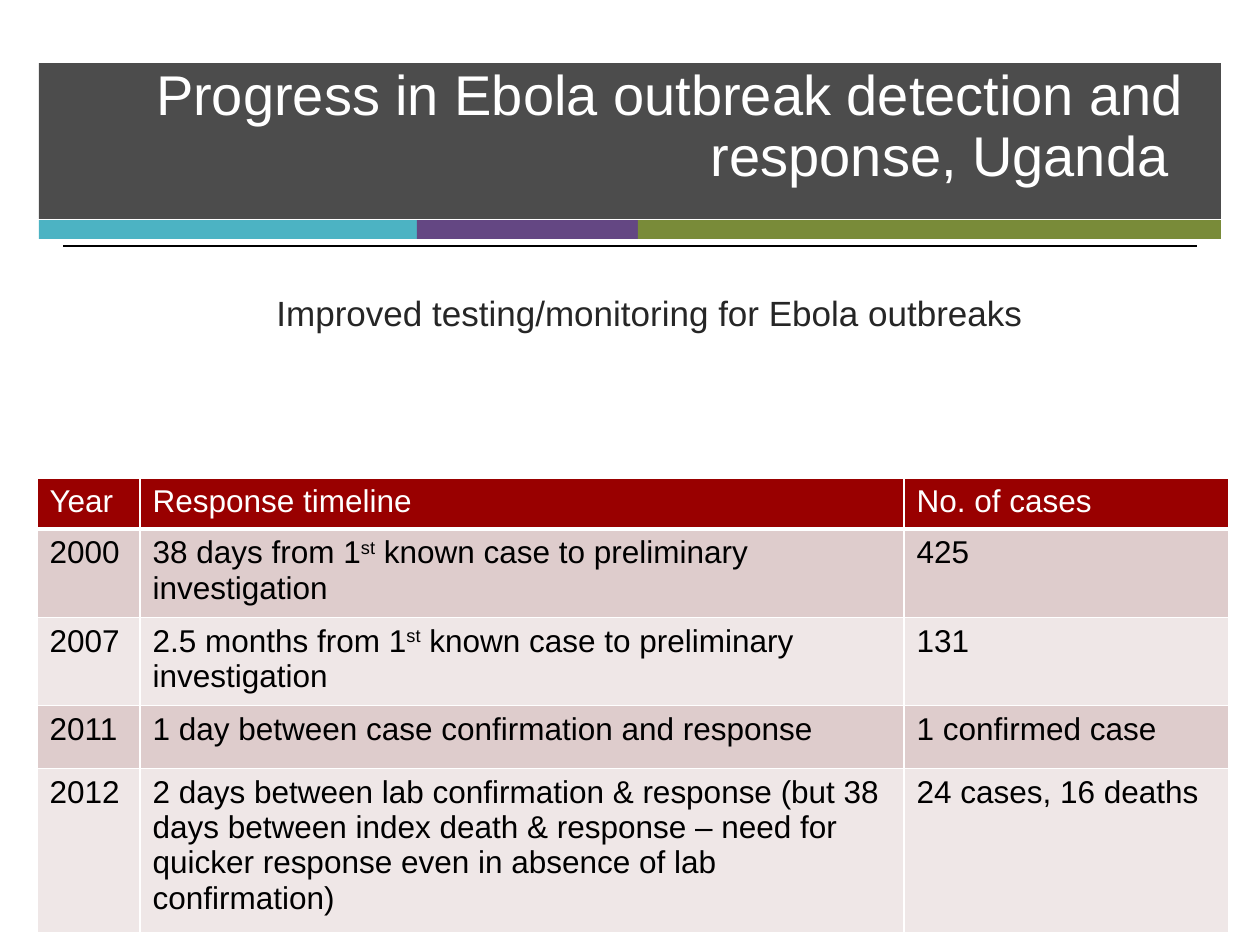
from lxml import etree
from pptx import Presentation
from pptx.dml.color import RGBColor
from pptx.enum.shapes import MSO_CONNECTOR, MSO_SHAPE
from pptx.enum.text import MSO_ANCHOR, PP_ALIGN
from pptx.oxml.ns import qn
from pptx.util import Pt

RECT = MSO_SHAPE.RECTANGLE
LINE = MSO_CONNECTOR.STRAIGHT
MIDDLE = MSO_ANCHOR.MIDDLE
RIGHT = PP_ALIGN.RIGHT
SCALE = 914400 / 126

STRIPES = [(378, "4CB3C3"), (221, "644783"), (583, "798B39")]
COLS = [103, 764, 325]
HEIGHTS = [51, 83, 84, 63, 153]
ROWS = [
    [["Year"], ["Response timeline"], ["No. of cases"]],
    [["2000"], ["38 days from 1", "st", " known case to preliminary investigation"], ["425"]],
    [["2007"], ["2.5 months from 1", "st", " known case to preliminary investigation"], ["131"]],
    [["2011"], ["1 day between case confirmation and response"], ["1 confirmed case"]],
    [["2012"], ["2 days between lab confirmation & response (but 38 days between "
                "index death & response – need for quicker response even in "
                "absence of lab confirmation)"], ["24 cases, 16 deaths"]],
]


def px(num):
    return round(num * SCALE)


def paint(fill, color):
    fill.solid()
    fill.fore_color.rgb = RGBColor.from_string(color)


def style(run, size, color):
    run.font.name = "Arial"
    run.font.size = Pt(size)
    run.font.color.rgb = RGBColor.from_string(color)


def block(slide, box, color):
    shape = slide.shapes.add_shape(RECT, *map(px, box))
    shape.shadow.inherit = False
    shape.line.fill.background()
    paint(shape.fill, color)
    return shape


def write(slide, box, text, size, color):
    frame = slide.shapes.add_textbox(*map(px, box)).text_frame
    frame.word_wrap = True
    frame.text = text
    style(frame.paragraphs[0].runs[0], size, color)
    return frame


def banner(slide, box):
    left, top, width, height = box
    band = block(slide, (left, top, width, 156), "000000")
    tint = band.fill._xPr.find(".//" + qn("a:srgbClr"))
    etree.SubElement(tint, qn("a:alpha"), val="70000")
    edge = left
    for span, color in STRIPES:
        block(slide, (edge, top + 157, span, 19), color)
        edge += span
    frame = write(slide, (0, top - 53, left + width - 24, 236),
                  "Progress in Ebola outbreak detection and response, Uganda ",
                  32, "FFFFFF")
    frame.vertical_anchor = MIDDLE
    frame.paragraphs[0].alignment = RIGHT
    frame.paragraphs[0].line_spacing = 0.9
    base = px(top + height)
    rule = slide.shapes.add_connector(
        LINE, px(left + 24), base, px(left + width - 24), base)
    rule.line.width = Pt(0.75)
    paint(rule.line.fill, "000000")
    etree.SubElement(rule._element.spPr, qn("a:effectLst"))


def lead(slide, box):
    frame = write(slide, box, "Improved testing/monitoring for Ebola outbreaks",
                  20, "262626")
    props = frame.paragraphs[0]._p.get_or_add_pPr()
    props.set("marL", str(px(144)))
    props.set("indent", str(px(-32)))


def border(cell, base):
    props = cell._tc.get_or_add_tcPr()
    sides = zip(("a:lnL", "a:lnR", "a:lnT", "a:lnB"), (1, 1, 1, base))
    for place, (tag, width) in enumerate(sides):
        line = etree.Element(qn(tag), w=str(Pt(width)))
        fill = etree.SubElement(line, qn("a:solidFill"))
        etree.SubElement(fill, qn("a:srgbClr"), val="FFFFFF")
        props.insert(place, line)


def fill_cell(cell, parts, head, back):
    para = cell.text_frame.paragraphs[0]
    for part in parts:
        run = para.add_run()
        run.text = part
        style(run, 18, "FFFFFF" if head else "000000")
        run.font.bold = False
        if part == "st":
            run.font._element.set("baseline", "30000")
    paint(cell.fill, back)
    border(cell, 3 if head else 1)


def cases(slide, box):
    table = slide.shapes.add_table(len(ROWS), len(COLS), *map(px, box)).table
    for col, width in zip(table.columns, COLS):
        col.width = px(width)
    for row, height in zip(table.rows, HEIGHTS):
        row.height = px(height)
    for i, row in enumerate(ROWS):
        back = "990000" if i == 0 else ("EFE7E7", "DECCCC")[i % 2]
        for j, parts in enumerate(row):
            fill_cell(table.cell(i, j), parts, i == 0, back)


def main():
    deck = Presentation()
    deck.slide_width = px(1260)
    deck.slide_height = px(945)
    slide = deck.slides.add_slide(deck.slide_layouts[6])
    banner(slide, (39, 63, 1182, 183))
    lead(slide, (152, 285, 887, 96))
    cases(slide, (37, 478, sum(COLS), sum(HEIGHTS)))
    deck.save("out.pptx")


if __name__ == "__main__":
    main()
